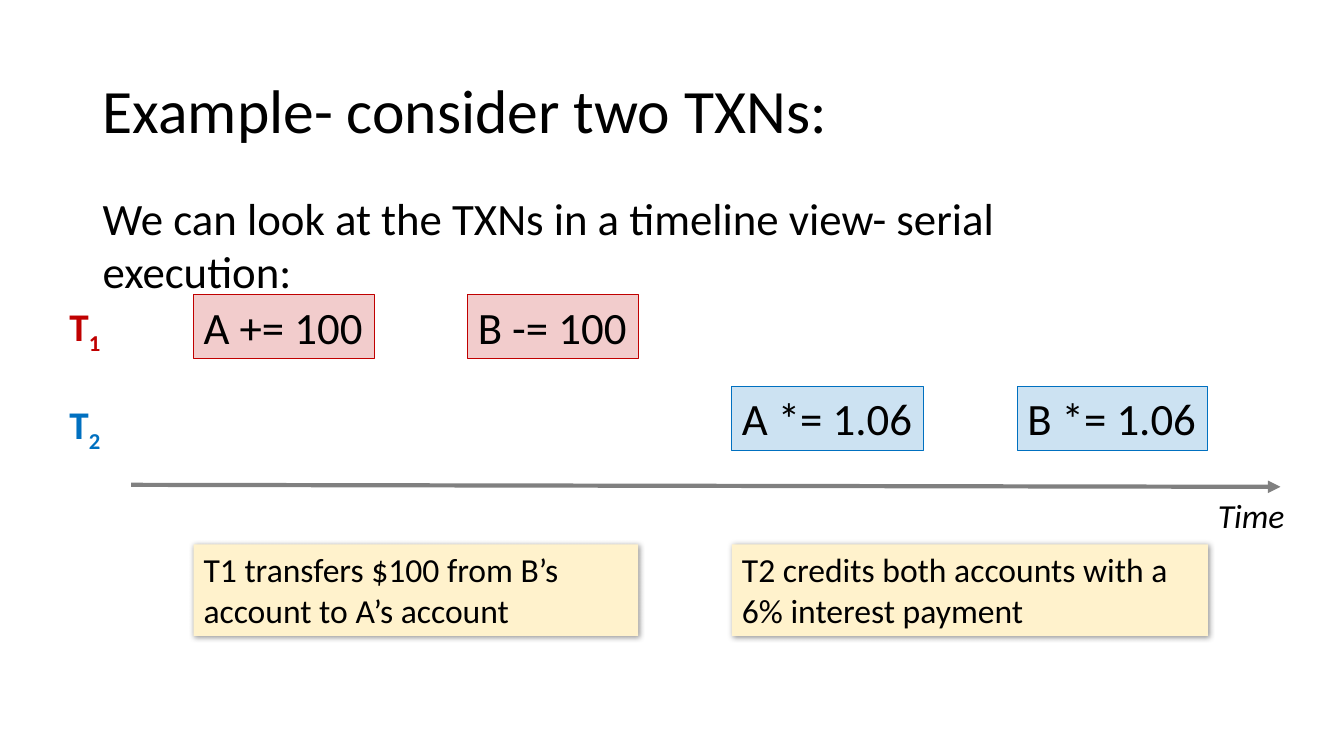
import pptx
import pptx.util
import pptx.dml.color
import pptx.enum.shapes
import pptx.enum.text
import pptx.oxml
import pptx.oxml.ns
import lxml.etree

Inches, Pt = pptx.util.Inches, pptx.util.Pt
qn = pptx.oxml.ns.qn
COLORS = {"text": "000000", "t1": "C00000", "t2": "0070C0",
          "note": "FFF2CC", "axis": "808080"}


def rgb(name):
    return pptx.dml.color.RGBColor.from_string(COLORS[name])


def write(shape, text, size, color="text", wrap=False):
    """Put one left-aligned paragraph at the top of a shape and return it."""
    frame = shape.text_frame
    frame.word_wrap = wrap
    frame.auto_size = pptx.enum.text.MSO_AUTO_SIZE.SHAPE_TO_FIT_TEXT
    frame.vertical_anchor = pptx.enum.text.MSO_ANCHOR.TOP
    paragraph = frame.paragraphs[0]
    paragraph.text = text
    paragraph.alignment = pptx.enum.text.PP_ALIGN.LEFT
    paragraph.font.name = "Calibri"
    paragraph.font.size = Pt(size)
    paragraph.font.color.rgb = rgb(color)
    return paragraph


presentation = pptx.Presentation()
presentation.slide_width = Inches(13.33)
presentation.slide_height = Inches(7.5)
shapes = presentation.slides.add_slide(presentation.slide_layouts[6]).shapes
RECTANGLE = pptx.enum.shapes.MSO_SHAPE.RECTANGLE

# Title
title = shapes.add_textbox(Inches(0.92), Inches(0.4), Inches(11.5), Inches(1.45))
write(title, "Example- consider two TXNs:", 44, wrap=True).line_spacing = 0.9
title.text_frame.auto_size = pptx.enum.text.MSO_AUTO_SIZE.NONE
title.text_frame.vertical_anchor = pptx.enum.text.MSO_ANCHOR.MIDDLE

# Explanatory notes with a soft shadow
for left, width, text in [
    (1.92, 4.41, "T1 transfers $100 from B’s account to A’s account"),
    (7.26, 4.72, "T2 credits both accounts with a 6% interest payment"),
]:
    note = shapes.add_shape(RECTANGLE, Inches(left), Inches(5.4), Inches(width), Inches(0.91))
    note.fill.solid()
    note.fill.fore_color.rgb = rgb("note")
    note.line.fill.background()
    note.shadow.inherit = False
    effects = note._element.spPr.find(qn("a:effectLst"))
    shadow = lxml.etree.SubElement(effects, qn("a:outerShdw"), blurRad=str(Pt(4)),
                                   dist=str(Pt(1)), dir="2700000", algn="tl", rotWithShape="0")
    shadow_color = lxml.etree.SubElement(shadow, qn("a:srgbClr"), val=COLORS["text"])
    lxml.etree.SubElement(shadow_color, qn("a:alpha"), val="40000")
    write(note, text, 24, wrap=True)

# Time axis
axis = shapes.add_connector(pptx.enum.shapes.MSO_CONNECTOR.STRAIGHT,
                            Inches(1.3), Inches(4.81), Inches(12.7), Inches(4.83))
axis.line.color.rgb = rgb("axis")
axis.line.width = Pt(3)
lxml.etree.SubElement(axis.line._get_or_add_ln(), qn("a:tailEnd"), type="triangle")
lxml.etree.SubElement(axis._element.spPr, qn("a:effectLst"))

# Transaction labels
for number, top, color in [("1", 2.95, "t1"), ("2", 3.92, "t2")]:
    label = shapes.add_textbox(Inches(0.59), Inches(top), Inches(0.53), Inches(0.57))
    paragraph = write(label, "T", 28, color)
    paragraph.font.bold = True
    subscript = paragraph.add_run()
    subscript.text = number
    subscript.font._element.set("baseline", "-25000")

# Operations of each transaction
for left, top, width, text, color in [
    (1.92, 2.92, 1.79, "A += 100", "t1"),
    (4.64, 2.92, 1.69, "B -= 100", "t1"),
    (7.26, 3.83, 1.9, "A *= 1.06", "t2"),
    (10.09, 3.83, 1.89, "B *= 1.06", "t2"),
]:
    operation = shapes.add_shape(RECTANGLE, Inches(left), Inches(top), Inches(width), Inches(0.64))
    operation.fill.solid()
    operation.fill.fore_color.rgb = rgb(color)
    fill_color = operation._element.spPr.find(qn("a:solidFill")).find(qn("a:srgbClr"))
    lxml.etree.SubElement(fill_color, qn("a:alpha"), val="20000")
    operation.line.color.rgb = rgb(color)
    operation.line.width = Pt(0.75)
    operation.shadow.inherit = False
    write(operation, text, 32)

# Axis caption and introduction
caption = shapes.add_textbox(Inches(11.98), Inches(4.86), Inches(0.87), Inches(0.5))
write(caption, "Time", 24).font.italic = True
introduction = shapes.add_textbox(Inches(0.92), Inches(1.84), Inches(10.9), Inches(0.64))
write(introduction, "We can look at the TXNs in a timeline view- serial execution:", 32, wrap=True)

presentation.save("out.pptx")
